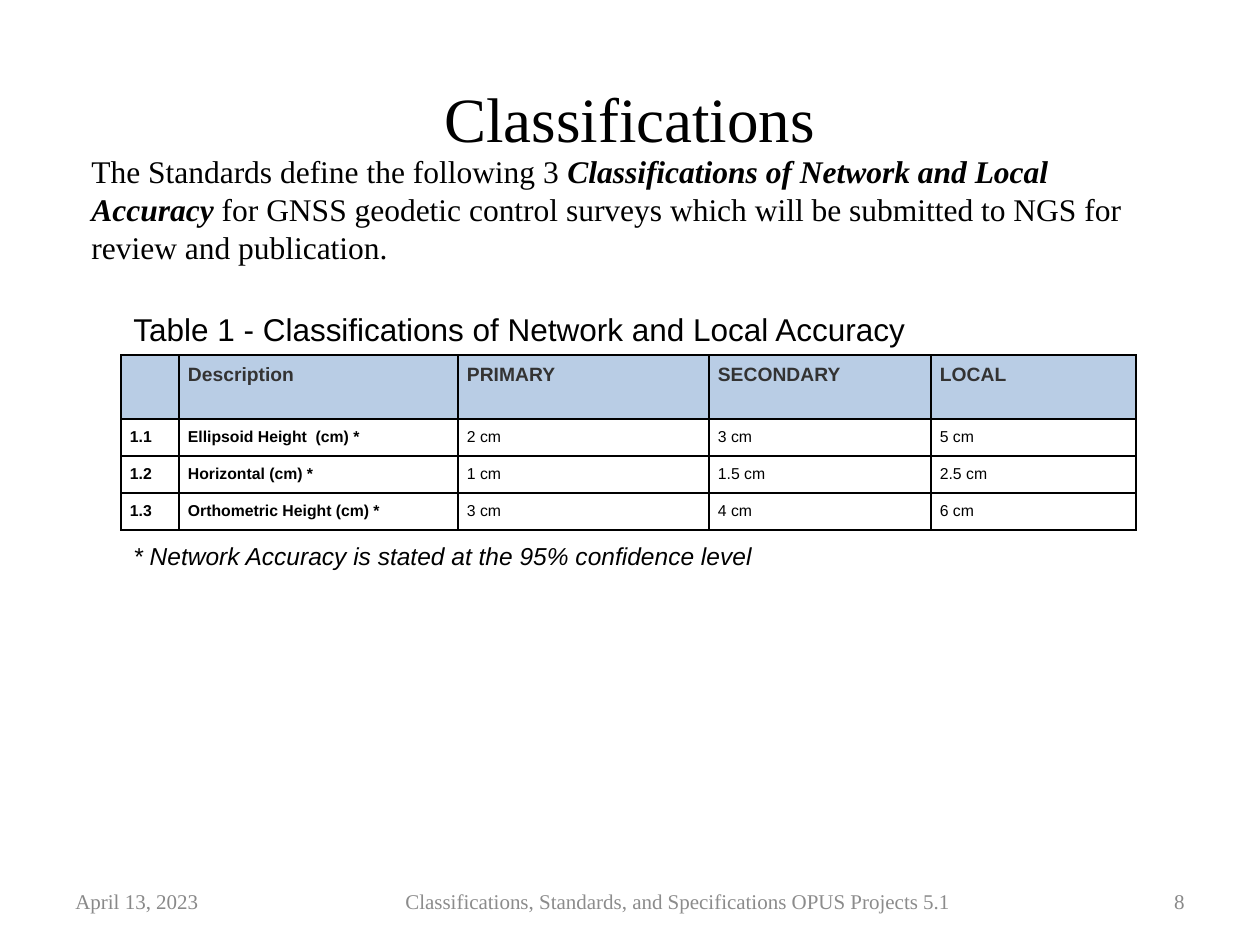
from lxml.etree import SubElement
from pptx import Presentation
from pptx.dml.color import RGBColor
from pptx.enum.text import MSO_ANCHOR as Anchor, PP_ALIGN as Align
from pptx.oxml.ns import qn
from pptx.util import Pt

PX = 914400 / 126
COLORS = {"text": "000000", "heading": "333333", "date": "898989",
          "footer": "8C8C8C", "header_fill": "B9CDE5", "border": "000000"}
SERIF, SANS = "Times New Roman", "Arial"
COL_WIDTHS = [58, 279, 251, 222, 205]
ROW_HEIGHTS = [64, 36, 36, 36]
ROWS = [
    ["", "Description", "PRIMARY", "SECONDARY", "LOCAL"],
    ["1.1", "Ellipsoid Height  (cm) *", "2 cm", "3 cm", "5 cm"],
    ["1.2", "Horizontal (cm) *", "1 cm", "1.5 cm", "2.5 cm"],
    ["1.3", "Orthometric Height (cm) *", "3 cm", "4 cm", "6 cm"],
]


def px(n):
    return round(n * PX)


def rgb(name):
    return RGBColor.from_string(COLORS[name])


def style(r, size, font, color="text", bold=False, italic=False):
    f = r.font
    f.size, f.name, f.bold, f.italic = Pt(size), font, bold, italic
    f.color.rgb = rgb(color)


def add_text(s, box, runs, size, font, color="text", align=Align.LEFT, anchor=Anchor.TOP):
    """Add a wrapped text box; runs are (text, bold, italic) tuples."""
    tf = s.shapes.add_textbox(*map(px, box)).text_frame
    tf.word_wrap, tf.vertical_anchor = True, anchor
    p = tf.paragraphs[0]
    p.alignment = align
    for text, bold, italic in runs:
        r = p.add_run()
        r.text = text
        style(r, size, font, color, bold, italic)


def set_borders(cell):
    tc_pr = cell._tc.get_or_add_tcPr()
    for i, side in enumerate(("a:lnL", "a:lnR", "a:lnT", "a:lnB")):
        ln = SubElement(tc_pr, qn(side), w=str(Pt(1)))
        fill = SubElement(ln, qn("a:solidFill"))
        SubElement(fill, qn("a:srgbClr"), val=COLORS["border"])
        tc_pr.insert(i, ln)


def fill_cell(cell, text, is_header, is_label):
    cell.margin_left = cell.margin_right = cell.margin_top = cell.margin_bottom = px(9)
    if is_header:
        cell.fill.solid()
        cell.fill.fore_color.rgb = rgb("header_fill")
    else:
        cell.fill.background()
    set_borders(cell)
    if text:
        cell.text_frame.text = text
        style(cell.text_frame.paragraphs[0].runs[0], 11 if is_header else 9, SANS,
              "heading" if is_header else "text", bold=is_header or is_label)


def add_accuracy_table(s, x, y):
    """Place the caption, the grid and the footnote; x, y is the grid's corner."""
    add_text(s, (x, y - 51, 892, 50),
             [("Table 1 - Classifications of Network and Local Accuracy", False, False)], 18, SANS)
    table = s.shapes.add_table(len(ROWS), len(COL_WIDTHS), px(x), px(y),
                               px(sum(COL_WIDTHS)), px(sum(ROW_HEIGHTS))).table
    table.horz_banding = False
    for col, width in zip(table.columns, COL_WIDTHS):
        col.width = px(width)
    for i, (row, height) in enumerate(zip(table.rows, ROW_HEIGHTS)):
        row.height = px(height)
        for j, cell in enumerate(row.cells):
            fill_cell(cell, ROWS[i][j], i == 0, j < 2)
    add_text(s, (x, y + 180, 871, 43),
             [("* Network Accuracy is stated at the 95% confidence level", False, True)], 14, SANS)


def add_heading(s, x, y, w):
    add_text(s, (x, y, w, 158), [("Classifications", False, False)], 36, SERIF,
             align=Align.CENTER, anchor=Anchor.MIDDLE)
    add_text(s, (x + 16, y + 108, w - 54, 127), [
        ("The Standards define the following 3 ", False, False),
        ("Classifications of Network and Local Accuracy ", True, True),
        ("for GNSS geodetic control surveys which will be submitted to NGS "
         "for review and publication.", False, False),
    ], 18, SERIF)


def add_footer(s, x, y, h):
    parts = [
        (0, 176, "April 13, 2023", "date", Align.LEFT),
        (228, 774, "Classifications, Standards, and Specifications OPUS Projects 5.1",
         "footer", Align.CENTER),
        (1034, 100, "8", "date", Align.RIGHT),
    ]
    for dx, w, text, color, align in parts:
        add_text(s, (x + dx, y, w, h), [(text, False, False)], 12, SERIF, color,
                 align, Anchor.MIDDLE)


def main():
    prs = Presentation()
    prs.slide_width, prs.slide_height = px(1260), px(945)
    s = prs.slides.add_slide(prs.slide_layouts[6])
    add_heading(s, 63, 38, 1134)
    add_accuracy_table(s, 121, 355)
    add_footer(s, 63, 876, 50)
    prs.save("out.pptx")


if __name__ == "__main__":
    main()
